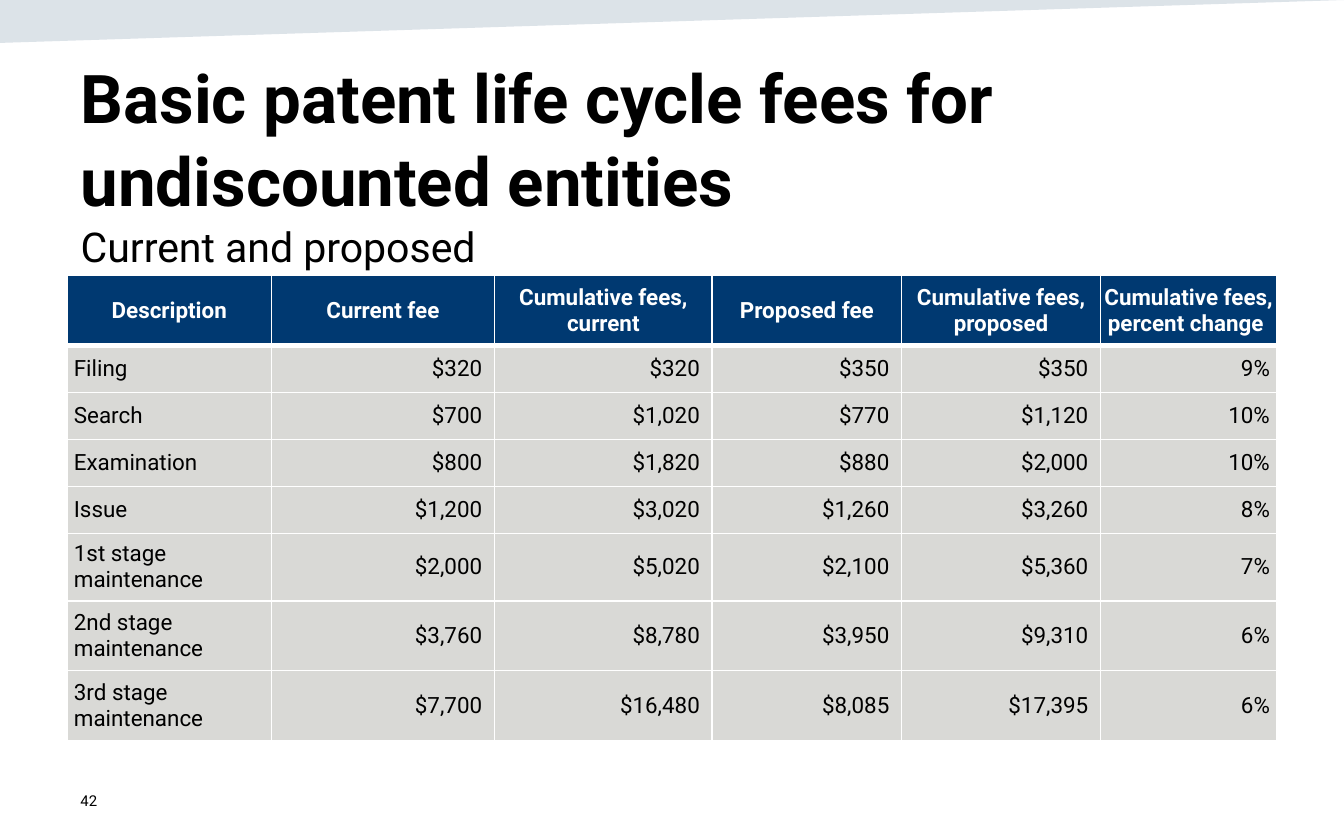
from lxml import etree
from pptx import Presentation
from pptx.dml.color import RGBColor
from pptx.enum import text
from pptx.oxml import ns
from pptx.util import Pt

FONT = "Roboto"
BLACK = RGBColor(0x00, 0x00, 0x00)
WHITE = RGBColor(0xFF, 0xFF, 0xFF)
NAVY = RGBColor(0x00, 0x39, 0x71)
GREY = RGBColor(0xD9, 0xD9, 0xD6)
TEAL = RGBColor(0x16, 0x44, 0x69)

TITLE_LINES = [
    ("Basic patent life cycle fees for ", 36, True),
    ("undiscounted entities", 36, True),
    ("Current and proposed", 22, False),
]
PAGE_NUMBER = "42"
HEADINGS = [
    "Description", "Current fee", "Cumulative fees, current", "Proposed fee",
    "Cumulative fees, proposed", "Cumulative fees, percent change ",
]
FEES = [
    ("Filing", "$320 ", "$320 ", "$350 ", "$350 ", "9%"),
    ("Search", "$700 ", "$1,020 ", "$770 ", "$1,120 ", "10%"),
    ("Examination", "$800 ", "$1,820 ", "$880 ", "$2,000 ", "10%"),
    ("Issue", "$1,200 ", "$3,020 ", "$1,260 ", "$3,260 ", "8%"),
    ("1st stage maintenance", "$2,000 ", "$5,020 ", "$2,100 ", "$5,360 ", "7%"),
    ("2nd stage maintenance", "$3,760 ", "$8,780 ", "$3,950 ", "$9,310 ", "6%"),
    ("3rd stage maintenance", "$7,700 ", "$16,480 ", "$8,085 ", "$17,395 ", "6%"),
]
COLUMN_WIDTHS = [109.44, 119.52, 116.64, 101.52, 106.56, 94.32]
ROW_HEIGHTS = [37.4] + [25.2] * 4 + [35.5] + [37.4] * 2
LEFT, WIDTH = 36, 648


def add_span(para, words, size, color, bold=False):
    span = para.add_run()
    span.text = words
    span.font.name = FONT
    span.font.size = Pt(size)
    span.font.bold = bold
    span.font.color.rgb = color


def set_margins(target, left, top, right, bottom):
    target.margin_left, target.margin_top = Pt(left), Pt(top)
    target.margin_right, target.margin_bottom = Pt(right), Pt(bottom)


def add_borders(cell, top, bottom):
    properties = cell._tc.get_or_add_tcPr()
    for side, width in (("L", 1), ("R", 1), ("T", top), ("B", bottom)):
        line = etree.SubElement(properties, ns.qn(f"a:ln{side}"), w=str(Pt(width)))
        fill = etree.SubElement(line, ns.qn("a:solidFill"))
        etree.SubElement(fill, ns.qn("a:srgbClr"), val=str(WHITE))


def add_band(page):
    builder = page.shapes.build_freeform(0, 0, scale=1.0)
    builder.add_line_segments([(0, Pt(23)), (Pt(720), 0)], close=True)
    band = builder.convert_to_shape()
    band.shadow.inherit = False
    band.line.fill.background()
    band.fill.solid()
    band.fill.fore_color.rgb = TEAL
    color = band._element.spPr.find(".//" + ns.qn("a:srgbClr"))
    etree.SubElement(color, ns.qn("a:alpha"), val="15000")


def add_title(page):
    title = page.shapes.title
    title.left, title.top = Pt(LEFT), Pt(24.5)
    title.width, title.height = Pt(WIDTH), Pt(74.9)
    frame = title.text_frame
    frame.word_wrap = True
    frame.auto_size = text.MSO_AUTO_SIZE.NONE
    frame.vertical_anchor = text.MSO_ANCHOR.TOP
    set_margins(frame, 7.2, 4.6, 7.2, 3.6)
    para = frame.paragraphs[0]
    para.alignment = text.PP_ALIGN.LEFT
    para.line_spacing = 1.03
    for index, (words, size, bold) in enumerate(TITLE_LINES):
        if index:
            para.add_line_break()
        add_span(para, words, size, BLACK, bold)


def add_page_number(page):
    box = page.shapes.add_textbox(Pt(LEFT), Pt(416.9), Pt(162), Pt(23.8))
    box.text_frame.word_wrap = True
    box.text_frame.vertical_anchor = text.MSO_ANCHOR.MIDDLE
    add_span(box.text_frame.paragraphs[0], PAGE_NUMBER, 8, BLACK)


def add_fee_table(page):
    rows = [HEADINGS] + FEES
    table = page.shapes.add_table(
        len(rows), len(HEADINGS), Pt(LEFT), Pt(147.6), Pt(WIDTH), Pt(sum(ROW_HEIGHTS))
    ).table
    table.horz_banding = False
    for column, width in zip(table.columns, COLUMN_WIDTHS):
        column.width = Pt(width)
    for row, height in zip(table.rows, ROW_HEIGHTS):
        row.height = Pt(height)
    for r, values in enumerate(rows):
        header = r == 0
        for c, words in enumerate(values):
            cell = table.cell(r, c)
            cell.vertical_anchor = text.MSO_ANCHOR.MIDDLE
            set_margins(cell, *((0.7, 0.7, 0.7, 0) if header else (3.6,) * 4))
            add_borders(cell, 3 if r == 1 else 1, 3 if header else 1)
            cell.fill.solid()
            cell.fill.fore_color.rgb = NAVY if header else GREY
            para = cell.text_frame.paragraphs[0]
            if header:
                para.alignment = text.PP_ALIGN.CENTER
            else:
                para.alignment = text.PP_ALIGN.RIGHT if c else text.PP_ALIGN.LEFT
            add_span(para, words, 12, WHITE if header else BLACK, header)


def main():
    deck = Presentation()
    deck.slide_width, deck.slide_height = Pt(720), Pt(450)
    page = deck.slides.add_slide(deck.slide_layouts[5])
    add_band(page)
    add_title(page)
    add_page_number(page)
    add_fee_table(page)
    deck.save("out.pptx")


if __name__ == "__main__":
    main()
